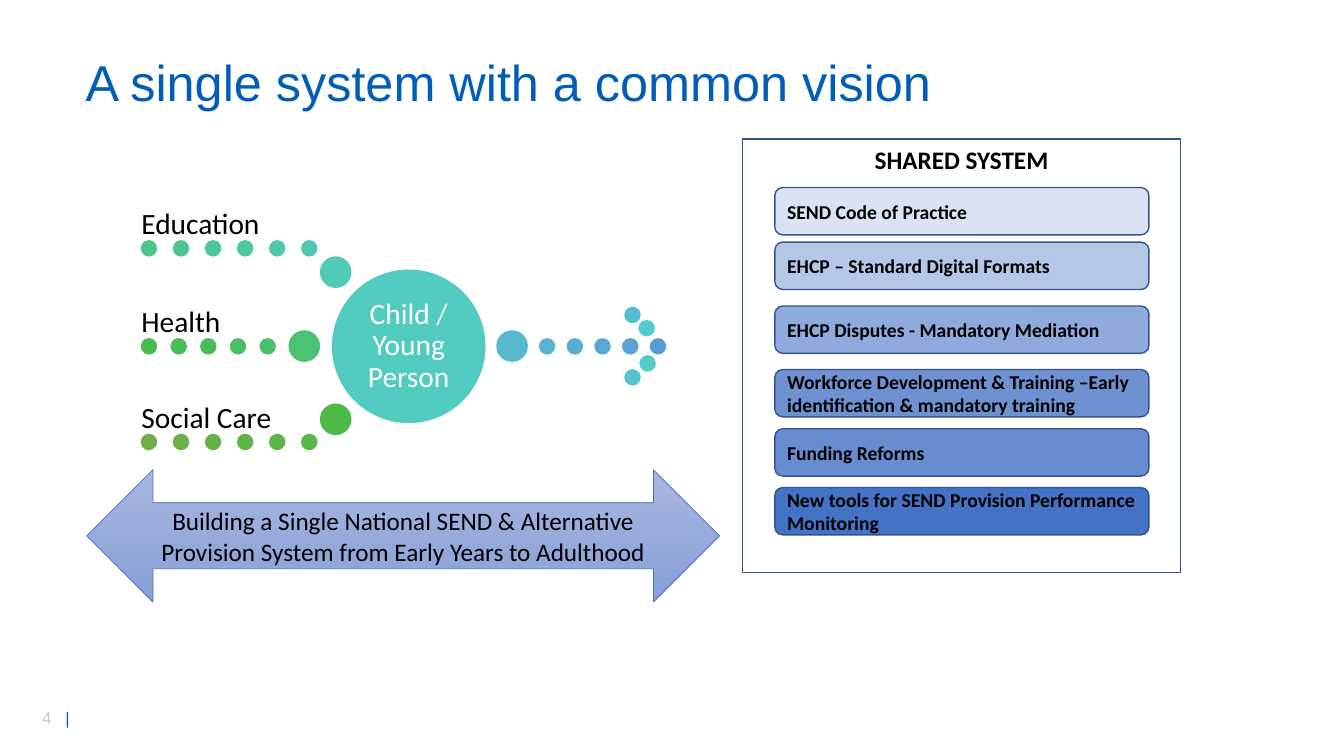
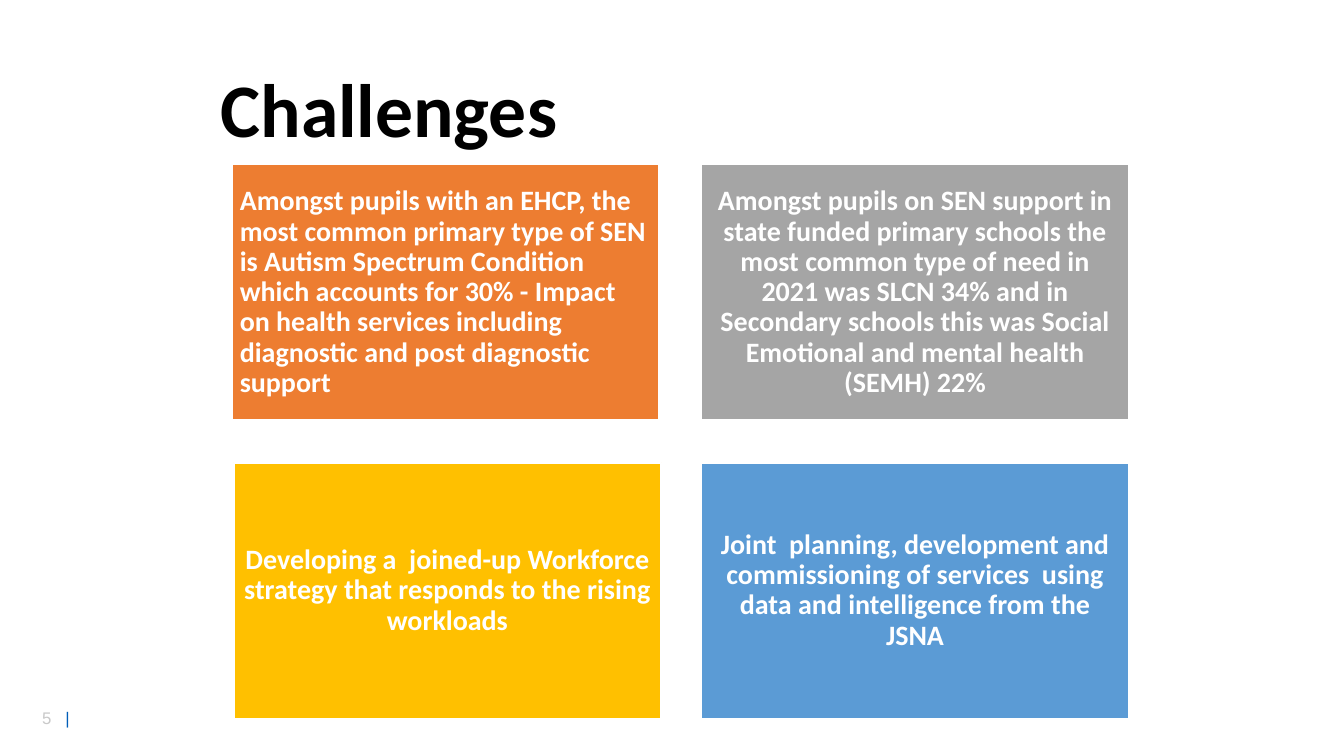
from lxml.etree import SubElement
from pptx import Presentation
from pptx.dml.color import RGBColor
from pptx.enum.shapes import MSO_SHAPE as SHAPE
from pptx.enum.text import MSO_ANCHOR as ANCHOR, PP_ALIGN as ALIGN
from pptx.oxml.ns import qn
from pptx.util import Pt

BLACK = RGBColor(0, 0, 0)
WHITE = RGBColor(255, 255, 255)
BLUE = RGBColor(0x00, 0x5E, 0xB8)
PALE_GREY = RGBColor(0xC9, 0xC9, 0xC9)
NAVY = RGBColor(0x32, 0x54, 0x91)
ARROW_LINE = RGBColor(0x44, 0x72, 0xC4)
ARROW_FILL = RGBColor(0xA8, 0xB7, 0xDF), RGBColor(0x88, 0x9E, 0xD7)
TEAL = RGBColor(0x52, 0xCB, 0xC0)
ORANGE = RGBColor(0xED, 0x7D, 0x31)
GREY = RGBColor(0xA5, 0xA5, 0xA5)
GOLD = RGBColor(0xFF, 0xC0, 0x00)
SKY = RGBColor(0x5B, 0x9B, 0xD5)

SMALL_DOT, BIG_DOT = 10.8, 21.6
STREAM_LEFT, LABEL_HEIGHT = 101, 27.5

STREAMS = [
    ("Education", 172, 22.9, "4DC48A 4EC591 4FC699 4FC7A1 50C8A9 51C9B0"),
    ("Health", 242, 21.2, "47BB4E 48BC55 49BD5C 49BF64 4AC06B"),
    ("Social Care", 310.3, 22.9, "70AD47 6BAF47 65B147 60B347 5AB546 54B746"),
]
OUTCOME = (385.4, 242, 19.8, "57B3D1 58ADD2 59A7D3 5AA1D4 5B9BD5")
ARROWHEAD_DOTS = [
    (446.4, 219.6, "56BFCF"), (456.5, 229, "54CBCD"),
    (457.2, 254.2, "53CCC8"), (446.4, 264.2, "55C5CE"),
]
BIG_DOTS = [
    (229, 183.6, "52CAB8"), (206.6, 236.4, "4BC173"),
    (229, 288.7, "4DB946"), (355, 236.4, "57B9D0"),
]
CHILD = "Child / Young Person"
ARROW_TEXT = ("Building a Single National SEND & Alternative Provision System "
              "from Early Years to Adulthood")

SHARED = [
    ("SEND Code of Practice", 134, "DAE3F3"),
    ("EHCP – Standard Digital Formats", 173, "B4C7E7"),
    ("EHCP Disputes - Mandatory Mediation", 218.6, "8FAADC"),
    ("Workforce Development & Training –Early identification & mandatory training",
     264, "6D91D1"),
    ("Funding Reforms", 306.3, "678CCF"),
    ("New tools for SEND Provision Performance Monitoring", 348.3, "4472C4"),
]

CARD_SIZE = (305.3, 183)
CHALLENGES = [
    ("Amongst pupils with an EHCP, the most common primary type of SEN is Autism "
     "Spectrum Condition which accounts for 30% - Impact on health services "
     "including diagnostic and post diagnostic support",
     165.6, 117.4, ORANGE, ALIGN.LEFT),
    ("Amongst pupils on SEN support in state funded primary schools the most "
     "common type of need in 2021 was SLCN 34% and in Secondary schools this was "
     "Social Emotional and mental health (SEMH) 22%",
     501, 117.4, GREY, ALIGN.CENTER),
    ("Developing a  joined-up Workforce strategy that responds to the rising "
     "workloads", 167, 330.5, GOLD, ALIGN.CENTER),
    ("Joint  planning, development and commissioning of services  using data and "
     "intelligence from the JSNA", 501, 330.5, SKY, ALIGN.CENTER),
]


def write(sp, text, size, color=BLACK, font="Calibri", bold=False,
          align=ALIGN.LEFT, anchor=ANCHOR.MIDDLE, inset=None, spacing=None):
    tf = sp.text_frame
    tf.word_wrap = True
    tf.vertical_anchor = anchor
    if inset is not None:
        tf.margin_left = tf.margin_top = Pt(inset)
        tf.margin_right = tf.margin_bottom = Pt(inset)
    p = tf.paragraphs[0]
    p.text = text
    p.alignment = align
    if spacing:
        p.line_spacing = spacing
    p.font.name, p.font.size, p.font.bold = font, Pt(size), bold
    p.font.color.rgb = color


def add_text(s, x, y, w, h, text, size, **style):
    sp = s.shapes.add_textbox(Pt(x), Pt(y), Pt(w), Pt(h))
    write(sp, text, size, **style)


def add_shape(s, kind, x, y, w, h, fill=None, line=None, width=1):
    sp = s.shapes.add_shape(kind, Pt(x), Pt(y), Pt(w), Pt(h))
    sp.shadow.inherit = False
    if fill is None:
        sp.fill.background()
    else:
        sp.fill.solid()
        sp.fill.fore_color.rgb = fill
    sp.line.color.rgb = line or fill
    sp.line.width = Pt(width)
    return sp


def add_dot(s, x, y, color, size=SMALL_DOT):
    add_shape(s, SHAPE.OVAL, x, y, size, size, RGBColor.from_string(color))


def add_dot_row(s, x, y, step, colors):
    for i, color in enumerate(colors.split()):
        add_dot(s, x + i * step, y, color)


def add_footer(s, number):
    sp = s.shapes.add_textbox(Pt(23), Pt(501.8), Pt(51), Pt(21.8))
    p = sp.text_frame.paragraphs[0]
    tabs = SubElement(p._p.get_or_add_pPr(), qn("a:tabLst"))
    SubElement(tabs, qn("a:tab"), pos=str(Pt(16.7)), algn="l")
    p.font.name, p.font.size = "Arial", Pt(12)
    for text, color in ((f"{number}\t", PALE_GREY), ("|", BLUE)):
        r = p.add_run()
        r.text = text
        r.font.color.rgb = color


def add_slide(prs, number):
    s = prs.slides.add_slide(prs.slide_layouts[6])
    add_footer(s, number)
    return s


def build_vision(prs):
    s = add_slide(prs, 4)
    add_text(s, 54, 36.7, 838, 48.2, "A single system with a common vision", 36,
             color=BLUE, font="Arial", spacing=0.9)

    add_dot_row(s, *OUTCOME)
    for x, y, color in ARROWHEAD_DOTS:
        add_dot(s, x, y, color)
    child = add_shape(s, SHAPE.OVAL, 237.6, 193, 108.7, 108.7, TEAL)
    write(child, CHILD, 21, color=WHITE, align=ALIGN.CENTER, inset=2.2, spacing=0.9)
    for label, y, step, colors in STREAMS:
        add_dot_row(s, STREAM_LEFT, y, step, colors)
        add_text(s, STREAM_LEFT, y - LABEL_HEIGHT, 126, LABEL_HEIGHT, label, 21,
                 anchor=ANCHOR.BOTTOM, inset=0, spacing=0.9)
    for x, y, color in BIG_DOTS:
        add_dot(s, x, y, color, BIG_DOT)

    arrow = add_shape(s, SHAPE.LEFT_RIGHT_ARROW, 62, 335.5, 452, 94.5,
                      line=ARROW_LINE, width=0.5)
    arrow.fill.gradient()
    arrow.fill.gradient_angle = 270
    for stop, color in zip(arrow.fill.gradient_stops, ARROW_FILL):
        stop.color.rgb = color
    write(arrow, ARROW_TEXT, 18, align=ALIGN.CENTER)

    panel = add_shape(s, SHAPE.RECTANGLE, 530.6, 99.4, 312.5, 309.6, line=NAVY)
    write(panel, "SHARED SYSTEM", 18, bold=True, align=ALIGN.CENTER, anchor=ANCHOR.TOP)
    for text, y, fill in SHARED:
        sp = add_shape(s, SHAPE.ROUNDED_RECTANGLE, 553.5, y, 267.2, 33.8,
                       RGBColor.from_string(fill), NAVY)
        write(sp, text, 14, bold=True)


def build_challenges(prs):
    s = add_slide(prs, 5)
    add_text(s, 150.5, 28.8, 743, 104.4, "Challenges", 54, bold=True, spacing=0.9)
    for text, x, y, fill, align in CHALLENGES:
        card = add_shape(s, SHAPE.RECTANGLE, x, y, *CARD_SIZE, fill, WHITE, 1.5)
        write(card, text, 20, color=WHITE, bold=True, align=align, inset=5.7,
              spacing=0.9)


def main():
    prs = Presentation()
    prs.slide_width, prs.slide_height = Pt(960), Pt(540)
    build_vision(prs)
    build_challenges(prs)
    prs.save("out.pptx")


if __name__ == "__main__":
    main()
